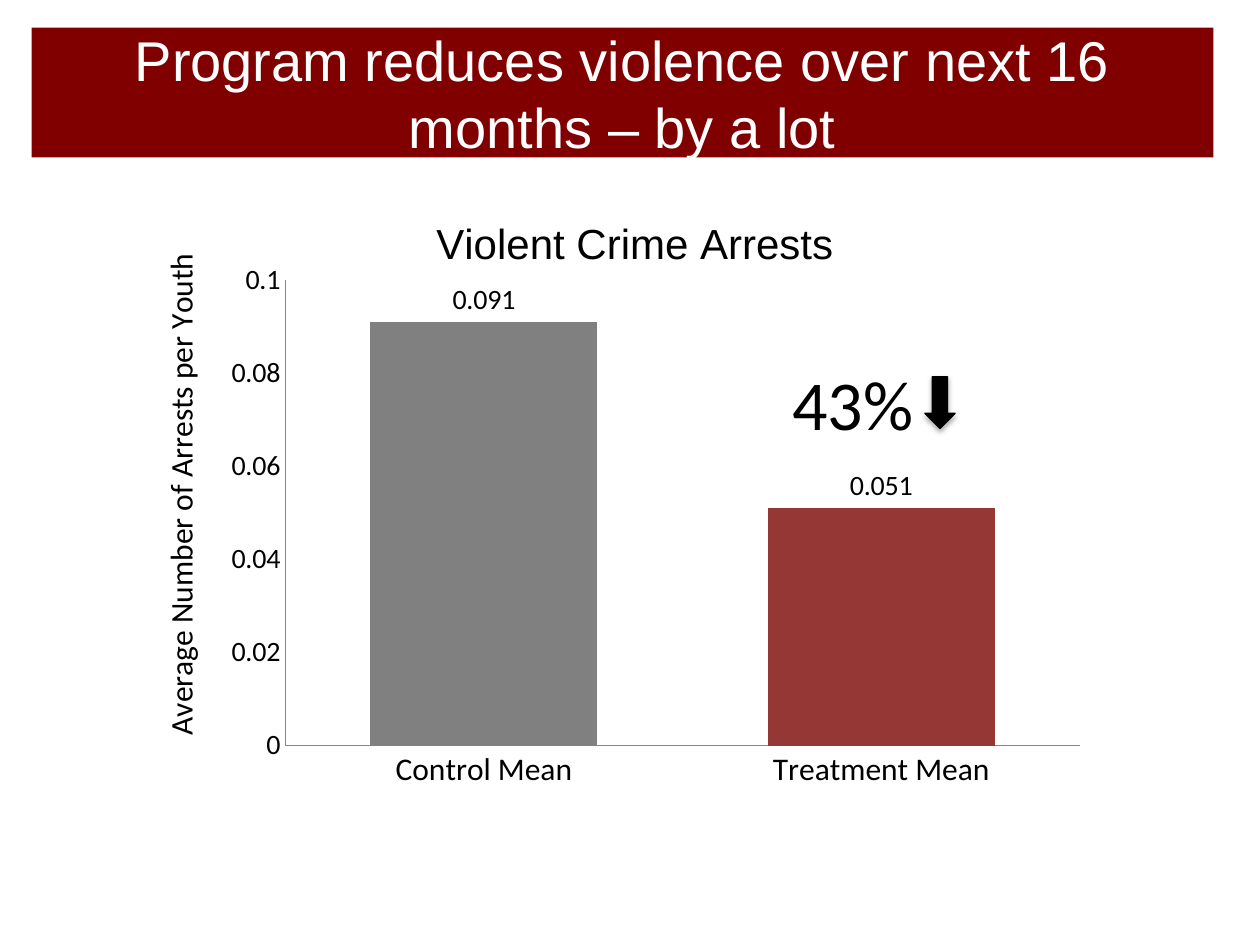
from lxml.etree import SubElement
from pptx import Presentation
from pptx.chart.data import CategoryChartData
from pptx.dml.color import RGBColor
from pptx.enum.chart import XL_CHART_TYPE, XL_LABEL_POSITION, XL_TICK_MARK
from pptx.enum.shapes import MSO_SHAPE
from pptx.enum.text import MSO_ANCHOR, MSO_AUTO_SIZE, PP_ALIGN
from pptx.oxml import parse_xml
from pptx.oxml.ns import nsdecls, qn
from pptx.util import Inches, Pt

HUES = {"band": "800000", "text": "000000", "pale": "FFFFFF",
        "control": "808080", "treated": "953735", "axis": "868686"}


def hue(name):
    return RGBColor.from_string(HUES[name])


def apply(item, values):
    for key, value in values.items():
        setattr(item, key, value)


def place(node, index, **spots):
    for old in node.findall(qn("c:layout")):
        node.remove(old)
    layout = parse_xml(f"<c:layout {nsdecls('c')}><c:manualLayout/></c:layout>")
    for key, value in spots.items():
        SubElement(layout[0], qn(f"c:{key}")).set("val", str(value))
    node.insert(index, layout)


class Deck:
    def __init__(self, wide, high):
        self.file = Presentation()
        apply(self.file, {"slide_width": Inches(wide), "slide_height": Inches(high)})
        self.slide = self.file.slides.add_slide(self.file.slide_layouts[6])

    def style(self, font, size, name="Calibri", tint="text"):
        apply(font, {"size": Pt(size), "name": name, "bold": False})
        font.color.rgb = hue(tint)

    def words(self, frame, text, size, name="Calibri", tint="text", align=None):
        part = frame.paragraphs[0]
        part.alignment = align
        run = part.add_run()
        run.text = text
        self.style(run.font, size, name, tint)

    def shape(self, kind, box, tint):
        item = self.slide.shapes.add_shape(kind, *map(Inches, box))
        item.shadow.inherit = False
        item.fill.solid()
        item.fill.fore_color.rgb = hue(tint)
        item.line.fill.background()
        return item

    def banner(self, text, box):
        frame = self.shape(MSO_SHAPE.RECTANGLE, box, "band").text_frame
        apply(frame, {"word_wrap": True, "vertical_anchor": MSO_ANCHOR.MIDDLE})
        self.words(frame, text, 32, "Arial", "pale", PP_ALIGN.CENTER)

    def label(self, text, size, box):
        frame = self.slide.shapes.add_textbox(*map(Inches, box)).text_frame
        apply(frame, {"word_wrap": False, "auto_size": MSO_AUTO_SIZE.SHAPE_TO_FIT_TEXT})
        self.words(frame, text, size)

    def arrow(self, box):
        item = self.shape(MSO_SHAPE.DOWN_ARROW, box, "text")
        item.line.color.rgb = hue("text")
        item.line.width = Pt(0.75)
        glow = item._element.spPr.find(qn("a:effectLst"))
        glow.append(parse_xml(
            f'<a:outerShdw {nsdecls("a")} blurRad="{Pt(3.1)}" dist="{Pt(1.8)}" '
            f'dir="5400000" rotWithShape="0"><a:srgbClr val="{HUES["text"]}">'
            '<a:alpha val="35000"/></a:srgbClr></a:outerShdw>'))

    def title(self, owner, text, size, name, x, y):
        self.words(owner.text_frame, text, size, name)
        place(owner._element, 1, xMode="edge", yMode="edge", x=x, y=y)

    def axis(self, axis, size):
        apply(axis, {"major_tick_mark": XL_TICK_MARK.NONE,
                     "minor_tick_mark": XL_TICK_MARK.NONE,
                     "has_major_gridlines": False})
        axis.format.line.color.rgb = hue("axis")
        self.style(axis.tick_labels.font, size)

    def chart(self, box, groups, values, tints):
        data = CategoryChartData()
        data.categories = groups
        data.add_series("Series 1", values)
        chart = self.slide.shapes.add_chart(
            XL_CHART_TYPE.COLUMN_CLUSTERED, *map(Inches, box), data).chart
        apply(chart, {"has_legend": False, "has_title": True})
        self.style(chart.font, 10)
        head = chart.chart_title
        self.title(head, "Violent Crime Arrests", 24, "Arial", 0.36, 0.08)
        head._element.find(qn("c:overlay")).set("val", "1")
        self.axis(chart.category_axis, 18)
        scale = chart.value_axis
        self.axis(scale, 16)
        apply(scale, {"minimum_scale": 0, "maximum_scale": 0.1,
                      "major_unit": 0.02, "has_title": True})
        self.title(scale.axis_title, "Average Number of Arrests per Youth",
                   18, "Calibri", 0.11, 0.14)
        plot = chart.plots[0]
        apply(plot, {"gap_width": 75, "vary_by_categories": False,
                     "has_data_labels": True})
        apply(plot.data_labels, {"show_value": True,
                                 "position": XL_LABEL_POSITION.OUTSIDE_END})
        self.style(plot.data_labels.font, 16)
        series = plot.series[0]
        series.format.fill.solid()
        series.format.fill.fore_color.rgb = hue(tints[-1])
        for index, tint in enumerate(tints):
            fill = series.points[index].format.fill
            fill.solid()
            fill.fore_color.rgb = hue(tint)
        place(chart._chartSpace.chart.plotArea, 0, layoutTarget="inner",
              xMode="edge", yMode="edge", x=0.23, y=0.19, w=0.72, h=0.72)


def main():
    deck = Deck(10, 7.5)
    deck.banner("Program reduces violence over next 16 months – by a lot",
                (0.25, 0.22, 9.38, 1.03))
    deck.chart((0.25, 1.25, 8.76, 5.13), ("Control Mean", "Treatment Mean"),
               (0.091, 0.051), ("control", "treated"))
    deck.label("43%", 40, (6.19, 2.81, 1.42, 0.77))
    deck.arrow((7.34, 2.99, 0.24, 0.41))
    deck.file.save("out.pptx")


if __name__ == "__main__":
    main()
